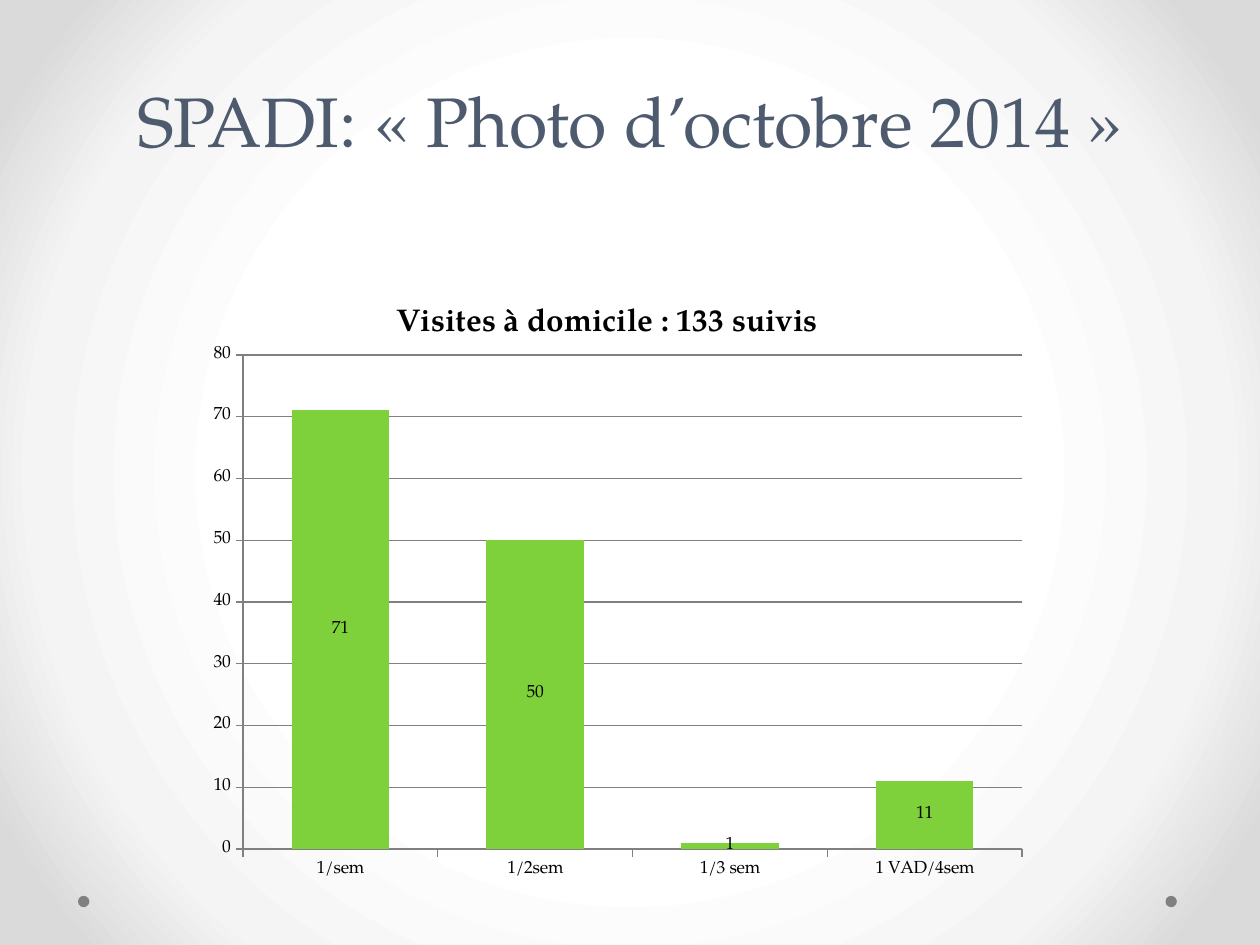
from lxml import etree
from pptx import Presentation
from pptx.chart.data import CategoryChartData
from pptx.dml.color import RGBColor
from pptx.enum.chart import XL_CHART_TYPE, XL_LABEL_POSITION, XL_TICK_MARK
from pptx.enum.shapes import MSO_SHAPE
from pptx.enum.text import MSO_ANCHOR, PP_ALIGN
from pptx.oxml import parse_xml
from pptx.oxml.ns import nsdecls, qn
from pptx.util import Pt

COLUMNS = XL_CHART_TYPE.COLUMN_CLUSTERED
LABEL_CENTER = XL_LABEL_POSITION.CENTER
TICK_OUTSIDE = XL_TICK_MARK.OUTSIDE
ELLIPSE = MSO_SHAPE.OVAL
MIDDLE = MSO_ANCHOR.MIDDLE
CENTER = PP_ALIGN.CENTER

FONT = "TeX Gyre Pagella"
BLACK = "000000"
GREY = "808080"
SLATE = "4E5B6F"
GREEN = "7FD13B"
BACKGROUND_STOPS = [(50, "FFFFFF"), (76, "F4F4F4"), (92, "DADADA")]
VISITS = {"1/sem": 71, "1/2sem": 50, "1/3 sem": 1, "1 VAD/4sem": 11}
PLOT_LAYOUT = {"x": 0.07, "y": 0.12, "w": 0.92, "h": 0.8}


def color(value):
    return RGBColor.from_string(value)


def write_text(frame, text, size, fill, bold=False, spacing=None):
    para = frame.paragraphs[0]
    para.alignment = CENTER
    if spacing:
        para.line_spacing = Pt(spacing)
    span = para.add_run()
    span.text = text
    span.font.name = FONT
    span.font.size = Pt(size)
    span.font.bold = bold
    span.font.color.rgb = color(fill)


def paint_background(page):
    page.background.fill.gradient()
    gradient = page._element.find(".//" + qn("a:gradFill"))
    for child in list(gradient):
        gradient.remove(child)
    stops = etree.SubElement(gradient, qn("a:gsLst"))
    for position, value in BACKGROUND_STOPS:
        stop = etree.SubElement(stops, qn("a:gs"), pos=str(position * 1000))
        etree.SubElement(stop, qn("a:srgbClr"), val=value)
    circle = etree.SubElement(gradient, qn("a:path"), path="circle")
    sides = dict.fromkeys("ltrb", "50000")
    etree.SubElement(circle, qn("a:fillToRect"), **sides)


def add_footer_dots(page, left, top, width, size):
    for dot_left in (left, left + width - size):
        dot = page.shapes.add_shape(ELLIPSE, Pt(dot_left), Pt(top), Pt(size), Pt(size))
        dot.shadow.inherit = False
        dot.fill.solid()
        dot.fill.fore_color.rgb = color(GREY)
        dot.line.fill.background()


def add_title(page, left, top, width, height):
    box = page.shapes.add_textbox(Pt(left), Pt(top), Pt(width), Pt(height))
    frame = box.text_frame
    frame.word_wrap = True
    frame.vertical_anchor = MIDDLE
    write_text(frame, "SPADI: «\u00a0Photo d’octobre 2014\u00a0»", size=40, fill=SLATE, spacing=58)


def set_plot_layout(chart):
    plot_area = chart._chartSpace.find(".//" + qn("c:plotArea"))
    for layout in plot_area.findall(qn("c:layout")):
        plot_area.remove(layout)
    modes = '<c:xMode val="edge"/><c:yMode val="edge"/>'
    sizes = "".join(f'<c:{side} val="{share}"/>' for side, share in PLOT_LAYOUT.items())
    plot_area.insert(0, parse_xml(
        f'<c:layout {nsdecls("c")}><c:manualLayout><c:layoutTarget val="inner"/>'
        f"{modes}{sizes}</c:manualLayout></c:layout>"
    ))


def style_line(line):
    line.color.rgb = color(GREY)
    line.width = Pt(0.75)


def add_visits_chart(page, left, top, width, height):
    data = CategoryChartData()
    data.categories = list(VISITS)
    data.add_series("Series 1", list(VISITS.values()))
    box = page.shapes.add_chart(COLUMNS, Pt(left), Pt(top), Pt(width), Pt(height), data)
    chart = box.chart
    chart.has_legend = False
    chart.font.name = FONT
    chart.font.size = Pt(10)
    chart.font.color.rgb = color(BLACK)
    chart.has_title = True
    write_text(chart.chart_title.text_frame, "Visites à domicile : 133 suivis",
               size=18, fill=BLACK, bold=True)
    set_plot_layout(chart)

    for axis in (chart.category_axis, chart.value_axis):
        axis.major_tick_mark = TICK_OUTSIDE
        style_line(axis.format.line)
    scale = chart.value_axis
    scale.minimum_scale, scale.maximum_scale, scale.major_unit = 0, 80, 10
    scale.has_major_gridlines = True
    style_line(scale.major_gridlines.format.line)

    plot = chart.plots[0]
    plot.gap_width = 100
    plot.vary_by_categories = False
    series = plot.series[0]
    series.format.fill.solid()
    series.format.fill.fore_color.rgb = color(GREEN)
    labels = series.data_labels
    labels.show_value = True
    labels.position = LABEL_CENTER


def main():
    deck = Presentation()
    deck.slide_width, deck.slide_height = Pt(720), Pt(540)
    page = deck.slides.add_slide(deck.slide_layouts[6])
    paint_background(page)
    add_footer_dots(page, left=44.6, top=511.9, width=627.9, size=6.5)
    add_title(page, left=36, top=0, width=648, height=126)
    add_visits_chart(page, left=105, top=160.5, width=484, height=353)
    deck.save("out.pptx")


if __name__ == "__main__":
    main()
